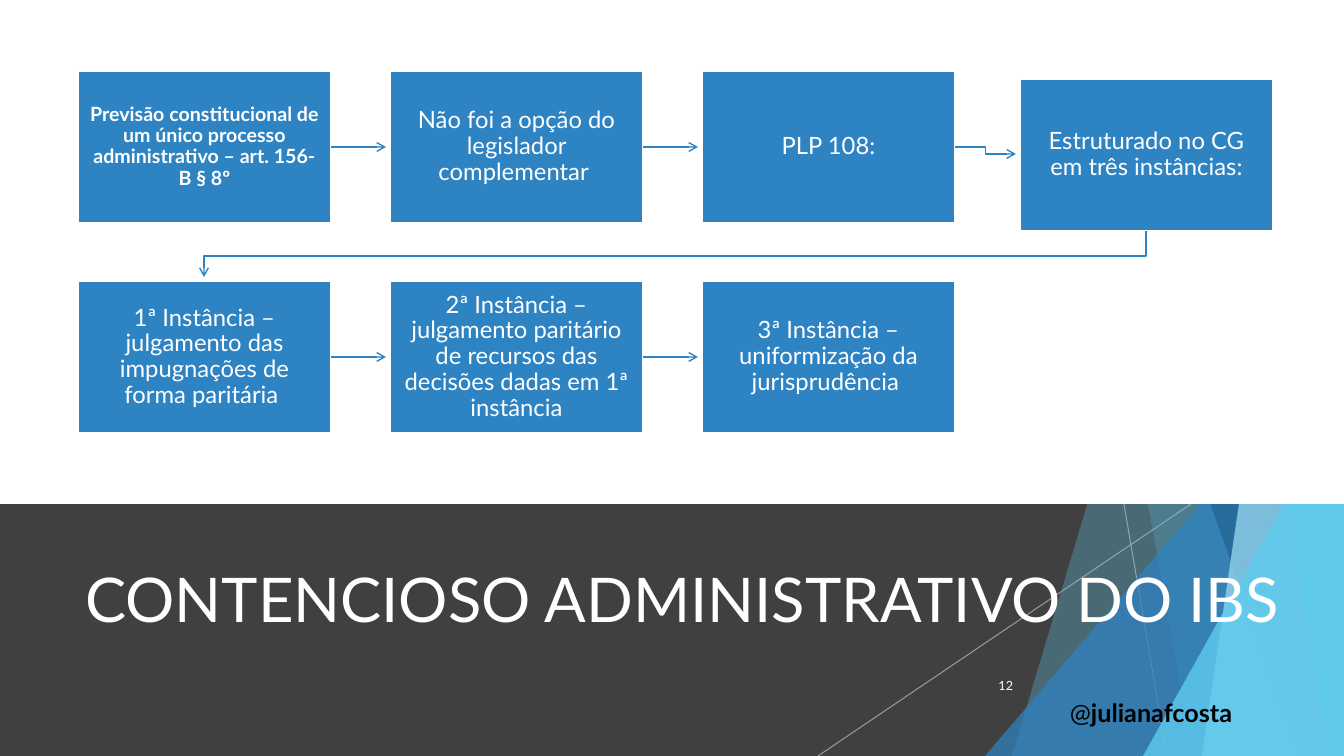
from lxml import etree
from pptx import Presentation, util as u
from pptx.dml.color import RGBColor
from pptx.enum import shapes, text
from pptx.oxml.ns import qn

SCALE = 914400 / 100.8
BLUE, SKY, NAVY, WHITE = "2E83C3", "5FCBEF", "226292", "FFFFFF"


def px(length):
    return u.Emu(round(length * SCALE))


def paint(color_format, color):
    color_format.rgb = RGBColor.from_string(color)


class Painter:
    """Draws styled elements on the current slide, measured in px."""

    font = "Lato"

    def __init__(self, page):
        self.page = page
        self.shapes = page.shapes

    def fade(self, fill_owner, percent):
        for color in fill_owner.iter(qn("a:srgbClr")):
            etree.SubElement(color, qn("a:alpha"), val=str(percent * 1000))

    def fill(self, shape, color, opacity=100):
        shape.shadow.inherit = False
        shape.fill.solid()
        paint(shape.fill.fore_color, color)
        shape.line.fill.background()
        if opacity < 100:
            self.fade(shape._element.spPr, opacity)
        return shape

    def panel(self, left, top, width, height, color):
        shape = self.shapes.add_shape(
            shapes.MSO_SHAPE.RECTANGLE, px(left), px(top), px(width), px(height))
        return self.fill(shape, color)

    def triangle(self, left, top, color, opacity):
        shape = self.shapes.add_shape(
            shapes.MSO_SHAPE.ISOSCELES_TRIANGLE,
            px(left), px(top), px(1344 - left), px(756 - top))
        shape.adjustments[0] = 1
        self.fill(shape, color, opacity)

    def outline(self, points, close):
        builder = self.shapes.build_freeform(*points[0], scale=SCALE)
        builder.add_line_segments(points[1:], close=close)
        shape = builder.convert_to_shape()
        shape.shadow.inherit = False
        return shape

    def blade(self, top_x, bottom_x, color, opacity):
        points = [(top_x, 0), (1344, 0), (1344, 756), (bottom_x, 756)]
        self.fill(self.outline(points, True), color, opacity)

    def stroke(self, shape, color, width, arrow=False):
        paint(shape.line.color, color)
        shape.line.width = u.Pt(width)
        if arrow:
            outline = shape._element.spPr.find(qn("a:ln"))
            etree.SubElement(outline, qn("a:tailEnd"), type="arrow")

    def connector(self, kind, start, end, color, width, arrow=False):
        line = self.shapes.add_connector(kind, *map(px, start + end))
        self.stroke(line, color, width, arrow)
        etree.SubElement(line._element.spPr, qn("a:effectLst"))
        return line

    def ray(self, start, end):
        line = self.connector(shapes.MSO_CONNECTOR.STRAIGHT, start, end, "BFBFBF", 0.75)
        self.fade(line._element.spPr, 70)

    def arrow(self, box, start, end):
        kinds = shapes.MSO_CONNECTOR
        kind = kinds.STRAIGHT if start[1] == end[1] else kinds.ELBOW
        line = self.connector(kind, start, end, BLUE, 1, True)
        line.begin_connect(box, 3)

    def route(self, points):
        shape = self.outline(points, False)
        shape.fill.background()
        self.stroke(shape, BLUE, 1, True)

    def put_text(self, shape, spans, size, color, align, anchor=text.MSO_ANCHOR.MIDDLE):
        frame = shape.text_frame
        frame.word_wrap = True
        frame.auto_size = text.MSO_AUTO_SIZE.NONE
        frame.vertical_anchor = anchor
        para = frame.paragraphs[0]
        para.alignment = align
        para.font.name = self.font
        para.font.size = u.Pt(size)
        paint(para.font.color, color)
        for words, bold in spans:
            span = para.add_run()
            span.text = words
            if bold:
                span.font.bold = True
        return para

    def step(self, left, top, words, size=17, bold=False):
        box = self.panel(left, top, 253, 152, BLUE)
        self.stroke(box, WHITE, 1.5)
        frame = box.text_frame
        frame.margin_left = frame.margin_right = px(12)
        frame.margin_top = frame.margin_bottom = px(13)
        para = self.put_text(box, [(words, bold)], size, WHITE, text.PP_ALIGN.CENTER)
        para.line_spacing = 0.9
        return box

    def label(self, left, top, width, height, *style):
        box = self.shapes.add_textbox(px(left), px(top), px(width), px(height))
        self.put_text(box, *style)

    def title(self, left, top, width, height, words):
        title = self.shapes.title
        title.left, title.top, title.width, title.height = map(px, (left, top, width, height))
        self.put_text(title, [(words, False)], 44, WHITE, text.PP_ALIGN.LEFT)
        self.shapes._spTree.append(title._element)


def draw_band(painter):
    painter.panel(0, 504, 1344, 252, "404040")
    painter.ray((1124, 504), (1167, 756))
    painter.ray((1191, 504), (818, 756))
    painter.blade(1238, 1012, SKY, 30)
    painter.blade(1058, 1193, SKY, 20)
    painter.triangle(985, 336, BLUE, 72)
    painter.blade(1029, 1301, NAVY, 70)
    painter.blade(1313, 1202, "9FE0F5", 70)
    painter.blade(1206, 1329, SKY, 65)
    painter.triangle(1143, 396, SKY, 80)
    painter.title(75, 525, 1228, 145, "CONTENCIOSO ADMINISTRATIVO DO IBS")
    painter.panel(0, 0, 1344, 504, WHITE)
    painter.label(947, 666, 76, 40, [("12", False)], 9, WHITE, text.PP_ALIGN.RIGHT)
    painter.label(1060, 692, 216, 40, [("@", False), ("julianafcosta", True)],
                  18, "000000", text.PP_ALIGN.LEFT, text.MSO_ANCHOR.TOP)


def draw_flow(painter):
    first_row = [
        "Previsão constitucional de um único processo administrativo – art. 156-B § 8º",
        "Não foi a opção do legislador complementar ",
        "PLP 108:",
    ]
    second_row = [
        "1ª Instância – julgamento das impugnações de forma paritária ",
        "2ª Instância – julgamento paritário de recursos das decisões dadas em 1ª instância",
        "3ª Instância – uniformização da jurisprudência ",
    ]
    for top, row in ((71, first_row), (281, second_row)):
        middle = top + 76
        for column, words in enumerate(row):
            left = 78 + 312 * column
            style = (14, True) if words is first_row[0] else (17, False)
            box = painter.step(left, top, words, *style)
            if column < 2:
                painter.arrow(box, (left + 253, middle), (left + 308, middle))
            elif row is first_row:
                painter.arrow(box, (left + 253, middle), (1016, 154))
    painter.step(1020, 79, "Estruturado no CG em três instâncias:")
    painter.route([(1146, 231), (1146, 256), (204, 256), (204, 277)])


def main():
    deck = Presentation()
    deck.slide_width, deck.slide_height = px(1344), px(756)
    painter = Painter(deck.slides.add_slide(deck.slide_layouts[5]))
    draw_band(painter)
    draw_flow(painter)
    deck.save("out.pptx")


if __name__ == "__main__":
    main()
